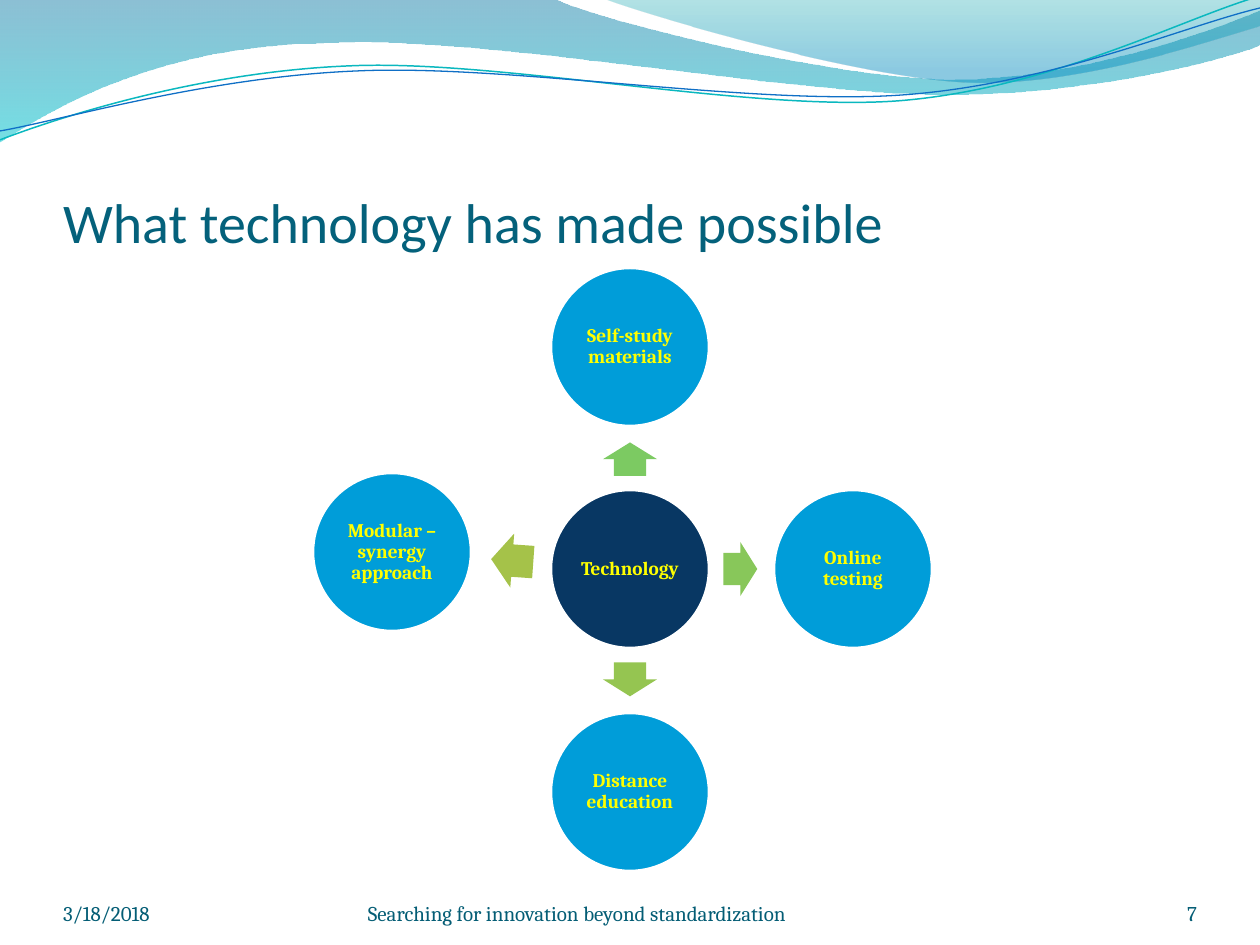
from dataclasses import dataclass
from math import atan2, cos, degrees, hypot, radians, sin

from lxml import etree
from pptx import Presentation
from pptx.dml.color import RGBColor
from pptx.enum.shapes import MSO_SHAPE
from pptx.enum.text import MSO_ANCHOR, PP_ALIGN
from pptx.oxml.ns import qn
from pptx.util import Emu, Pt

ELLIPSE, RIGHT_ARROW = MSO_SHAPE.OVAL, MSO_SHAPE.RIGHT_ARROW
LEFT, CENTER, RIGHT = PP_ALIGN.LEFT, PP_ALIGN.CENTER, PP_ALIGN.RIGHT
MIDDLE, BOTTOM = MSO_ANCHOR.MIDDLE, MSO_ANCHOR.BOTTOM
TITLE_ONLY = 5
PX = 914400 / 126


@dataclass(frozen=True)
class Theme:
    title: str = "04617B"
    footer: str = "045D75"
    hub: str = "083763"
    node: str = "009DD9"
    node_text: str = "FFFF00"
    outline: str = "FFFFFF"
    heading_font: str = "Calibri"
    body_font: str = "Cambria"
    title_size: int = 32
    footer_size: int = 12
    node_size: int = 11


@dataclass(frozen=True)
class Stop:
    position: float
    color: str
    opacity: int


@dataclass(frozen=True)
class Wave:
    """Segments hold one point for a straight line, three for a Bezier curve."""
    start: tuple
    segments: tuple
    stops: tuple = ()
    line: str = ""
    width: float = 0
    tilt: float = 0


@dataclass(frozen=True)
class Node:
    text: str
    x: int
    y: int
    arrow_color: str


@dataclass(frozen=True)
class Footer:
    text: str
    left: int
    width: int
    align: PP_ALIGN


THEME = Theme()
HUB_X, HUB_Y, DIAMETER = 630, 569, 159
ARROW_WIDTH, ARROW_SHARE, ARROW_PLACE = 54, 0.53, 0.495
FOOTER_TOP, FOOTER_HEIGHT = 876, 50
TILT_CENTER = (630, 73)

WAVES = (
    Wave((0, 0), (
        ((554, -1),),
        ((600, 21), (837, 79), (955, 79)),
        ((1075, 79), (1207, 33), (1260, 11)),
        ((1261, 45),),
        ((1239, 55), (1096, 96), (940, 94)),
        ((784, 94), (481, 35), (324, 43)),
        ((163, 45), (58, 105), (-1, 142)),
        ((0, 0),),
    ), stops=(Stop(0, "0074A1", 45), Stop(1, "00C6CF", 55))),
    Wave((604, -1), (
        ((641, 14), (859, 78), (969, 82)),
        ((1079, 86), (1211, 40), (1260, 26)),
        ((1260, 0),),
        ((604, -1),),
    ), stops=(Stop(0, "00A1A9", 30), Stop(0.8, "008BBF", 45))),
    Wave((0, 140), (
        ((60, 117), (199, 72), (349, 66)),
        ((498, 59), (747, 112), (898, 101)),
        ((1050, 89), (1182, 19), (1257, -3)),
    ), line="0AB8BF", width=0.85, tilt=-2.7),
    Wave((0, 131), (
        ((59, 121), (207, 77), (357, 71)),
        ((508, 64), (752, 106), (903, 95)),
        ((1053, 84), (1184, 26), (1260, 8)),
    ), line="0F6FC6", width=0.75, tilt=-2.7),
)
NODES = (
    Node("Self-study materials", 630, 347, "7CCA62"),
    Node("Online testing", 853, 569, "88C75A"),
    Node("Distance education", 630, 792, "95C551"),
    Node("Modular –synergy approach", 392, 552, "A5C249"),
)
FOOTERS = (
    Footer("Searching for innovation beyond standardization", 368, 462, LEFT),
    Footer("3/18/2018", 63, 294, LEFT),
    Footer("7", 1092, 105, RIGHT),
)


def px(value: float) -> Emu:
    return Emu(round(value * PX))


def rgb(color: str) -> RGBColor:
    return RGBColor.from_string(color)


def untilt(point: tuple, tilt: float) -> tuple:
    """Place a point where it lies before its shape is rotated by tilt."""
    angle = radians(-tilt)
    center_x, center_y = TILT_CENTER
    dx, dy = point[0] - center_x, point[1] - center_y
    return (center_x + dx * cos(angle) - dy * sin(angle),
            center_y + dx * sin(angle) + dy * cos(angle))


def bend(shape, segments: tuple) -> None:
    """Join each three lines that stand for one curve into a cubic Bezier."""
    lines = iter(list(shape.element.spPr.iter(qn("a:lnTo"))))
    for segment in segments:
        parts = [next(lines) for _ in segment]
        if len(parts) == 1:
            continue
        curve = etree.Element(qn("a:cubicBezTo"))
        parts[0].addprevious(curve)
        for part in parts:
            curve.append(part[0])
            part.getparent().remove(part)


def draw_wave(slide, wave: Wave) -> None:
    corners = [wave.start, *(point for segment in wave.segments for point in segment)]
    points = [(px(x), px(y)) for x, y in (untilt(corner, wave.tilt) for corner in corners)]
    builder = slide.shapes.build_freeform(*points[0], scale=1.0)
    builder.add_line_segments(points[1:], close=bool(wave.stops))
    shape = builder.convert_to_shape()
    bend(shape, wave.segments)
    shape.rotation = wave.tilt % 360
    shape.shadow.inherit = False
    if not wave.stops:
        shape.fill.background()
        shape.line.color.rgb = rgb(wave.line)
        shape.line.width = Pt(wave.width)
        return
    shape.line.fill.background()
    shape.fill.gradient()
    shape.fill.gradient_angle = 270
    for gradient_stop, stop in zip(shape.fill.gradient_stops, wave.stops):
        gradient_stop.position = stop.position
        gradient_stop.color.rgb = rgb(stop.color)
    colors = shape.element.spPr.iter(qn("a:srgbClr"))
    for color, stop in zip(list(colors), wave.stops):
        etree.SubElement(color, qn("a:alpha"), val=str(stop.opacity * 1000))


def write(shape, text: str, font: str, size: int, color: str, align=LEFT,
          anchor=BOTTOM, inset: int = 0, bold: bool = False) -> None:
    frame = shape.text_frame
    frame.text = text
    frame.word_wrap = True
    frame.vertical_anchor = anchor
    frame.margin_left = frame.margin_right = px(inset)
    frame.margin_top = frame.margin_bottom = px(inset)
    paragraph = frame.paragraphs[0]
    paragraph.alignment = align
    run_font = paragraph.runs[0].font
    run_font.name, run_font.size, run_font.bold = font, Pt(size), bold
    run_font.color.rgb = rgb(color)


def add_filled(slide, kind, x: float, y: float, width: float, height: float, color: str):
    """Add a preset shape centred on x, y."""
    shape = slide.shapes.add_shape(kind, px(x - width / 2), px(y - height / 2),
                                   px(width), px(height))
    shape.shadow.inherit = False
    shape.fill.solid()
    shape.fill.fore_color.rgb = rgb(color)
    shape.line.fill.background()
    return shape


def draw_circle(slide, text: str, x: int, y: int, color: str) -> None:
    circle = add_filled(slide, ELLIPSE, x, y, DIAMETER, DIAMETER, color)
    circle.line.color.rgb = rgb(THEME.outline)
    circle.line.width = Pt(2)
    write(circle, text, THEME.body_font, THEME.node_size, THEME.node_text,
          CENTER, MIDDLE, inset=2, bold=True)
    circle.text_frame.paragraphs[0].line_spacing = 0.9


def draw_arrow(slide, node: Node) -> None:
    """Point an arrow from the hub to the node, sized to the gap between them."""
    dx, dy = node.x - HUB_X, node.y - HUB_Y
    length = (hypot(dx, dy) - DIAMETER) * ARROW_SHARE
    arrow = add_filled(slide, RIGHT_ARROW, HUB_X + dx * ARROW_PLACE,
                       HUB_Y + dy * ARROW_PLACE, length, ARROW_WIDTH, node.arrow_color)
    arrow.adjustments[0], arrow.adjustments[1] = 0.6, 0.5
    arrow.rotation = degrees(atan2(dy, dx)) % 360


def main() -> None:
    presentation = Presentation()
    presentation.slide_width, presentation.slide_height = px(1260), px(945)
    slide = presentation.slides.add_slide(presentation.slide_layouts[TITLE_ONLY])
    for wave in WAVES:
        draw_wave(slide, wave)
    title = slide.shapes.title
    title.left, title.top, title.width, title.height = px(63), px(97), px(1134), px(158)
    write(title, "What technology has made possible", THEME.heading_font,
          THEME.title_size, THEME.title)
    draw_circle(slide, "Technology", HUB_X, HUB_Y, THEME.hub)
    for node in NODES:
        draw_arrow(slide, node)
        draw_circle(slide, node.text, node.x, node.y, THEME.node)
    for footer in FOOTERS:
        box = slide.shapes.add_textbox(px(footer.left), px(FOOTER_TOP),
                                       px(footer.width), px(FOOTER_HEIGHT))
        write(box, footer.text, THEME.body_font, THEME.footer_size, THEME.footer,
              footer.align)
    presentation.save("out.pptx")


if __name__ == "__main__":
    main()
